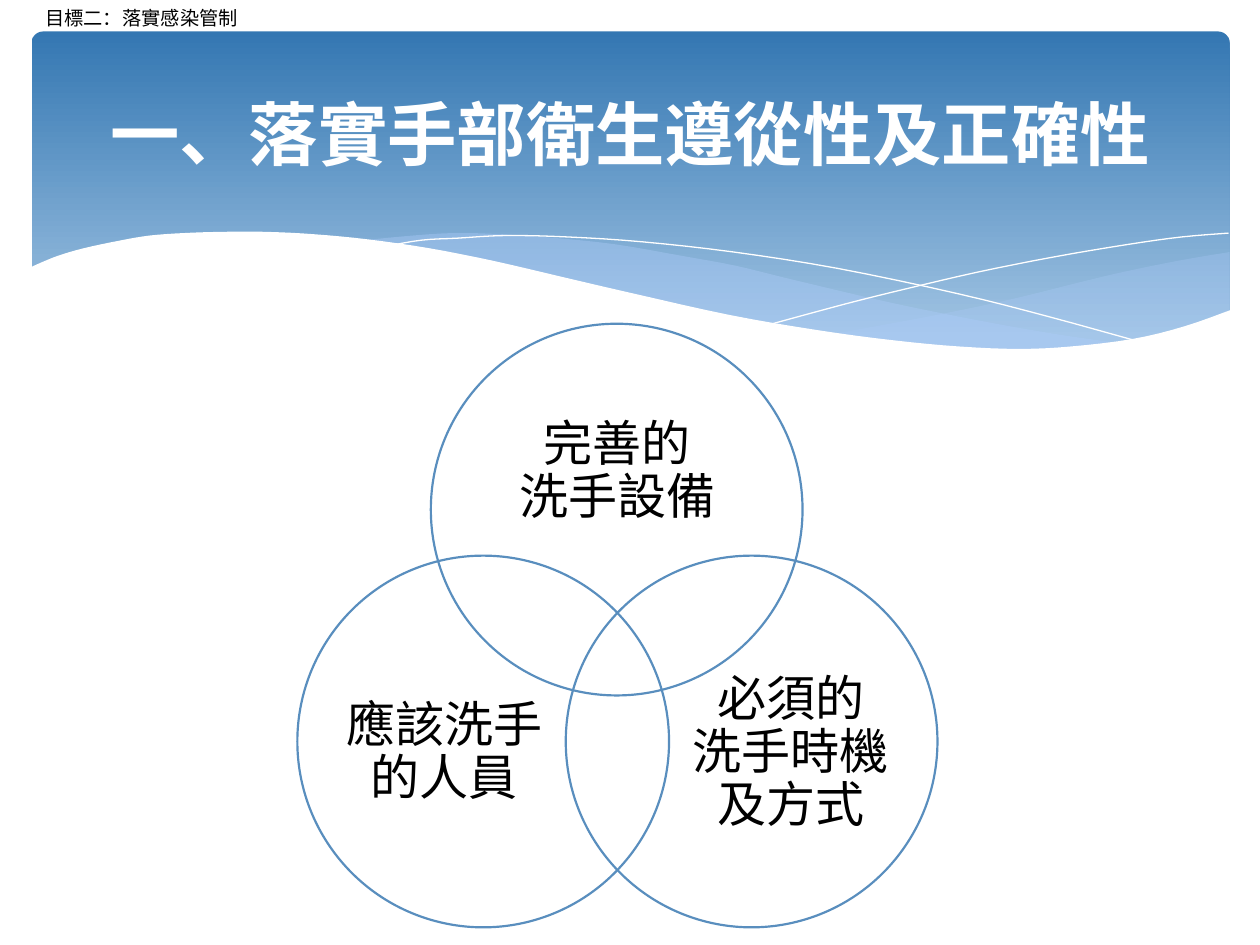
import pptx
import pptx.dml.color
import pptx.enum.shapes
import pptx.enum.text
import pptx.oxml.ns
import pptx.util
from lxml import etree

Pt = pptx.util.Pt
SHAPES = pptx.enum.shapes.MSO_SHAPE
ALIGN = pptx.enum.text.PP_ALIGN
ANCHOR = pptx.enum.text.MSO_ANCHOR

COLORS = {
    "page": "FFFFFF", "banner_top": "3477B2", "banner_bottom": "A1C4E3",
    "wave": "ACCBF9", "ring": "598EBE", "text": "000000", "light": "FFFFFF",
}
LATIN, ASIAN = "Arial", "Noto Sans CJK SC"

SECTION = "目標二：落實感染管制"
TITLE = "一、落實手部衛生遵從性及正確性"

# Circle left, top; text box left, top, width, height; lines of text
CIRCLE_SIZE = 212.4
CIRCLES = [
    ((246.2, 185), (275, 221.8, 155.5, 95.8), ["完善的", "洗手設備"]),
    ((323.3, 317.5), (388.1, 372.2, 127.4, 116.6), ["必須的", "洗手時機及方式"]),
    ((169.9, 317.5), (190.1, 372.2, 127.4, 116.6), ["應該洗手的人員"]),
]

# Each wave is an upper and a lower curve, with its opacity in percent
WAVES = [
    (29,
     [(702.7, 144), (673.2, 149), (641.5, 155.5), (619.9, 160.6), (579.6, 170.6),
      (542.2, 178.6), (508.3, 185), (475.9, 190.8)],
     [(475.9, 190.8), (507.6, 195.1), (536.4, 198), (562.3, 199.4), (586.1, 200.2),
      (607.7, 199.4), (634.3, 196.6), (657.4, 192.2), (678.2, 186.5), (702.7, 177.8)]),
    (40,
     [(643, 196.6), (602.6, 190.8), (558, 182.9), (508.3, 172.8), (452.9, 159.8),
      (420.5, 151.9), (389.5, 146.2), (352.1, 139.7), (318.2, 136.1), (287.3, 133.9),
      (259.9, 133.2), (236.2, 134.6), (205.9, 137.5)],
     [(205.9, 137.5), (246.2, 143.3), (290.9, 151.9), (323.3, 159.8), (381.6, 172.8),
      (432.7, 183.6), (478.8, 191.5), (519.8, 197.3), (565.2, 200.2), (603.4, 200.2),
      (643, 196.6)]),
]
HAIRLINES = [
    [(222.5, 140.4), (241.2, 137.2), (261.4, 136.1), (288.7, 134.6), (324, 135.4),
     (367.2, 138.2), (419, 144), (478.8, 153.4), (547.2, 167.8), (598.3, 180.7),
     (653, 195.8)],
    [(441.4, 185), (483.8, 173.5), (518.4, 164.9), (558.7, 155.5), (601.9, 146.9),
     (644.4, 139.7), (675.4, 135.4), (702, 133.2)],
]
PAGE_EDGE = [
    (703.4, 177.1), (676.8, 186.5), (647.3, 193.7), (612, 198), (582.5, 199.4),
    (547.9, 198), (509.8, 194.4), (466.6, 188.6), (416.9, 180), (362.2, 167.8),
    (321.8, 158.4), (281.5, 149), (244.8, 141.8), (210.2, 136.8), (180, 133.9),
    (151.9, 132.5), (127.4, 132.5), (105.1, 133.2), (85.7, 134.6), (68.4, 137.5),
    (48.2, 141.8), (33.1, 146.2), (20.9, 151.2), (16.6, 153.4),
]
PAGE_CORNERS = [(16.6, 236.9), (703.4, 236.9)]


def rgb(name):
    return pptx.dml.color.RGBColor.from_string(COLORS[name])


def smooth(knots, steps=4):
    """Return points on the Catmull-Rom curve through the knots."""
    ends = [knots[0], *knots, knots[-1]]
    points = [knots[0]]
    for quad in zip(ends, ends[1:], ends[2:], ends[3:]):
        for step in range(1, steps + 1):
            t = step / steps
            points.append(tuple(
                b + t * (c - a) / 2 + t * t * (a - 2.5 * b + 2 * c - d / 2)
                + t ** 3 * (3 * b - a - 3 * c + d) / 2
                for a, b, c, d in zip(*quad)))
    return points


def add_outline(page, points, close, fill=None, opacity=100):
    """Add a filled area, or a white hairline when there is no fill."""
    corners = [(Pt(x), Pt(y)) for x, y in points]
    builder = page.shapes.build_freeform(*corners[0], scale=1.0)
    builder.add_line_segments(corners[1:], close=close)
    outline = builder.convert_to_shape()
    outline.shadow.inherit = False
    if fill is None:
        outline.fill.background()
        outline.line.color.rgb = rgb("light")
        outline.line.width = Pt(0)
        return
    outline.line.fill.background()
    outline.fill.solid()
    outline.fill.fore_color.rgb = rgb(fill)
    if opacity < 100:
        color = outline.fill._xPr.find(".//" + pptx.oxml.ns.qn("a:srgbClr"))
        etree.SubElement(color, pptx.oxml.ns.qn("a:alpha"), val=str(opacity * 1000))


def add_text(page, place, lines, size, color="text", latin=LATIN, bold=False,
             align=ALIGN.CENTER, anchor=ANCHOR.MIDDLE, wrap=True, inset=None, spacing=None):
    box = page.shapes.add_textbox(*map(Pt, place))
    frame = box.text_frame
    frame.word_wrap = wrap
    frame.vertical_anchor = anchor
    if inset is not None:
        frame.margin_left = frame.margin_right = Pt(inset)
        frame.margin_top = frame.margin_bottom = Pt(inset)
    para = frame.paragraphs[0]
    para.alignment = align
    para.line_spacing = spacing
    for number, line in enumerate(lines):
        if number:
            para.add_line_break()
        span = para.add_run()
        span.text = line
        span.font.name = latin
        span.font.size = Pt(size)
        span.font.bold = bold
        span.font.color.rgb = rgb(color)
        etree.SubElement(span.font._element, pptx.oxml.ns.qn("a:ea"), typeface=ASIAN)


def add_banner(page):
    banner = page.shapes.add_shape(
        SHAPES.ROUNDED_RECTANGLE, Pt(18), Pt(18), Pt(684.7), Pt(194.4))
    banner.adjustments[0] = 0.034
    banner.shadow.inherit = False
    banner.line.fill.background()
    banner.fill.gradient()
    banner.fill.gradient_angle = 270
    stops = zip(banner.fill.gradient_stops, (0, 0.9), ("banner_top", "banner_bottom"))
    for stop, position, color in stops:
        stop.position = position
        stop.color.rgb = rgb(color)


def add_circle(page, corner):
    circle = page.shapes.add_shape(
        SHAPES.OVAL, *map(Pt, corner), Pt(CIRCLE_SIZE), Pt(CIRCLE_SIZE))
    circle.shadow.inherit = False
    circle.fill.background()
    circle.line.color.rgb = rgb("ring")
    circle.line.width = Pt(1.25)


def main():
    deck = pptx.Presentation()
    deck.slide_width, deck.slide_height = Pt(720), Pt(540)
    page = deck.slides.add_slide(deck.slide_layouts[6])
    page.background.fill.solid()
    page.background.fill.fore_color.rgb = rgb("page")

    add_banner(page)
    for opacity, upper, lower in WAVES:
        add_outline(page, smooth(upper) + smooth(lower), True, "wave", opacity)
    for knots in HAIRLINES:
        add_outline(page, smooth(knots), False)
    add_outline(page, smooth(PAGE_EDGE) + PAGE_CORNERS, True, "page")

    add_text(page, (18.7, 0, 125.3, 20.9), [SECTION], 11, latin=ASIAN,
             align=ALIGN.LEFT, anchor=ANCHOR.TOP, wrap=False)
    for corner, place, lines in CIRCLES:
        add_circle(page, corner)
        add_text(page, place, lines, 28, inset=0, spacing=0.9)
    add_text(page, (36, 26.6, 648, 98.6), [TITLE], 39.6, "light", bold=True)
    deck.save("out.pptx")


if __name__ == "__main__":
    main()
